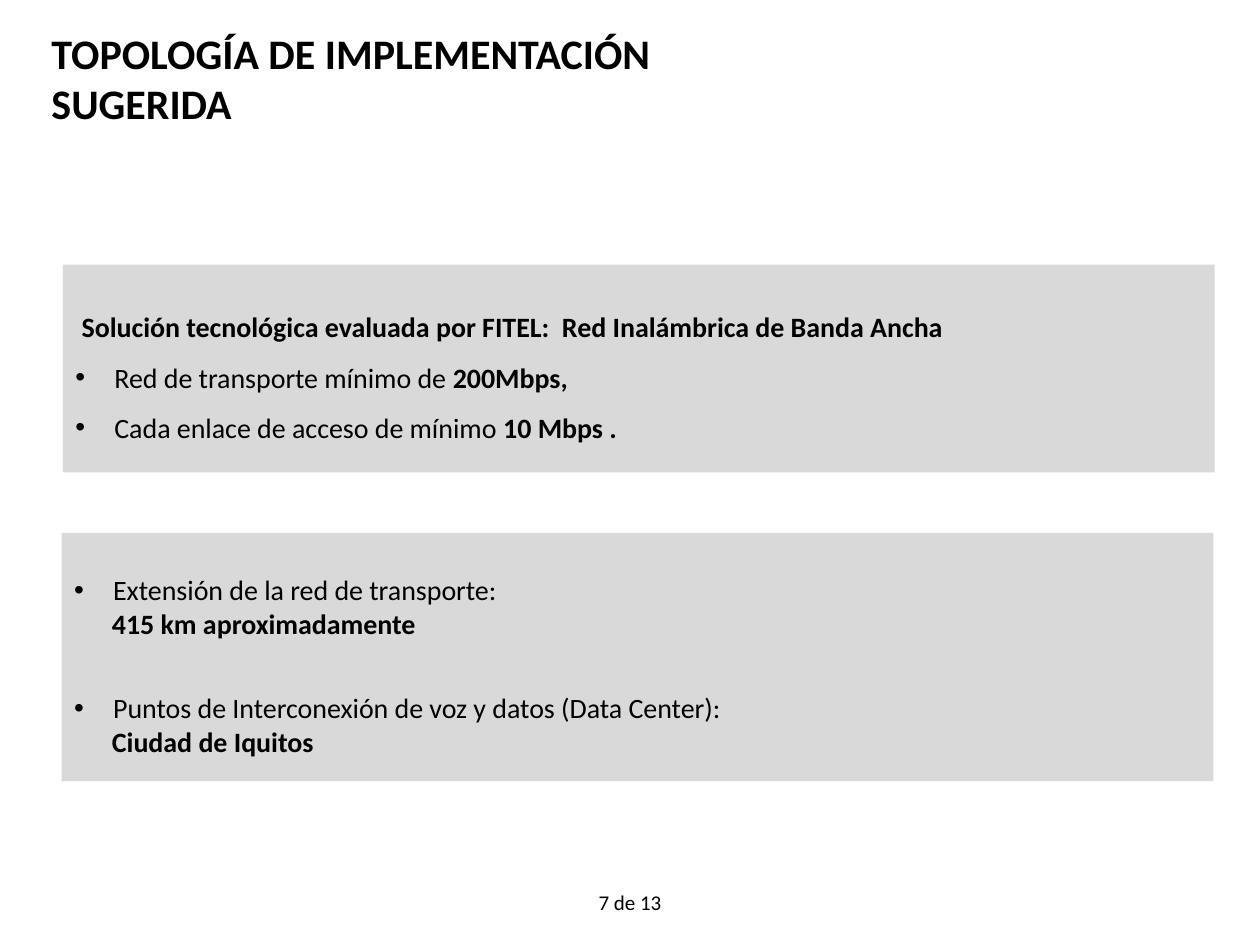
from lxml import etree
from pptx import Presentation
from pptx.dml.color import RGBColor
from pptx.enum.shapes import MSO_SHAPE as Shape
from pptx.enum.text import MSO_ANCHOR as Anchor, PP_ALIGN as Align
from pptx.oxml.ns import qn
from pptx.util import Inches, Pt

COLORS = {"text": "000000", "panel": "D9D9D9"}
FONT = "Calibri"
BULLET_INDENT = 0.31


def set_indent(para, left, bullet):
    props = para._p.get_or_add_pPr()
    props.set("marL", str(Inches(left)))
    props.set("indent", str(Inches(-left if bullet else 0)))
    if bullet:
        etree.SubElement(props, qn("a:buFont")).set("typeface", "Arial")
        etree.SubElement(props, qn("a:buChar")).set("char", "•")


def write(para, text, size=16, bold=False):
    for number, line in enumerate(text.split("\n")):
        if number:
            para.add_line_break()
        span = para.add_run()
        span.text = line
        span.font.name = FONT
        span.font.size = Pt(size)
        span.font.bold = bold
        span.font.color.rgb = RGBColor.from_string(COLORS["text"])


def add_label(page, text, left, top, width, height, size,
              bold=False, align=Align.LEFT, anchor=Anchor.TOP):
    box = page.shapes.add_textbox(Inches(left), Inches(top), Inches(width), Inches(height))
    frame = box.text_frame
    frame.word_wrap = True
    frame.vertical_anchor = anchor
    para = frame.paragraphs[0]
    para.alignment = align
    write(para, text, size=size, bold=bold)


def add_panel(page, left, top, height, items):
    panel = page.shapes.add_shape(
        Shape.RECTANGLE, Inches(left), Inches(top), Inches(9.14), Inches(height))
    panel.shadow.inherit = False
    panel.fill.solid()
    panel.fill.fore_color.rgb = RGBColor.from_string(COLORS["panel"])
    panel.line.fill.background()
    frame = panel.text_frame
    frame.word_wrap = True
    frame.vertical_anchor = Anchor.MIDDLE
    for number, item in enumerate(items):
        para = frame.add_paragraph() if number else frame.paragraphs[0]
        add_item(para, **item)


def add_item(para, plain="", strong="", left=BULLET_INDENT, bullet=False, spacing=1.5, before=0):
    para.alignment = Align.LEFT
    para.line_spacing = spacing
    para.space_before = Pt(before)
    set_indent(para, left, bullet)
    if plain:
        write(para, plain)
    if strong:
        write(para, strong, bold=True)


def main():
    deck = Presentation()
    deck.slide_width, deck.slide_height = Inches(10), Inches(7.5)
    page = deck.slides.add_slide(deck.slide_layouts[6])

    add_panel(page, 0.5, 2.1, 1.65, [
        dict(strong="Solución tecnológica evaluada por FITEL:  Red Inalámbrica de Banda Ancha",
             left=0.05),
        dict(plain="Red de transporte mínimo de ", strong="200Mbps,", bullet=True),
        dict(plain="Cada enlace de acceso de mínimo ", strong="10 Mbps .", bullet=True),
    ])
    add_label(page, "TOPOLOGÍA DE IMPLEMENTACIÓN\nSUGERIDA", 0.31, 0.29, 5.95, 0.65,
              size=24, bold=True, anchor=Anchor.MIDDLE)
    add_label(page, "7 de 13", 4.57, 7.01, 0.86, 0.39, size=12, align=Align.CENTER)
    add_panel(page, 0.49, 4.23, 1.97, [
        dict(plain="Extensión de la red de transporte:", bullet=True),
        dict(strong="415 km aproximadamente", left=0.3, spacing=1),
        dict(plain="Puntos de Interconexión de voz y datos (Data Center):", bullet=True,
             before=19.5),
        dict(strong="Ciudad de Iquitos", left=0.3, spacing=1),
    ])
    deck.save("out.pptx")


if __name__ == "__main__":
    main()
